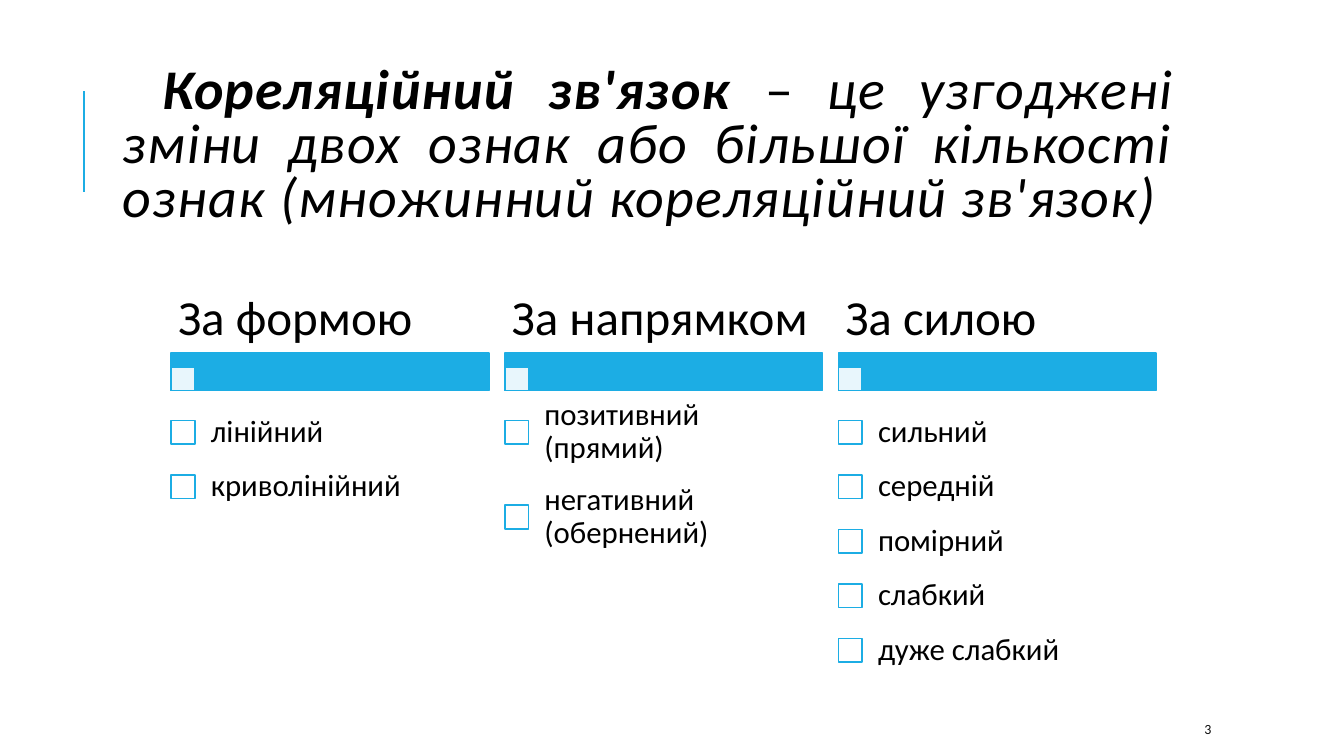
from lxml import etree
from pptx import Presentation
from pptx.enum import shapes, text
from pptx.dml.color import RGBColor
from pptx.oxml import ns
from pptx.util import Pt

COLORS = {"accent": "1CADE4", "paper": "FFFFFF", "ink": "000000", "number": "0D0D0D"}
COLUMNS = [
    ("За формою", 38.9, ["лінійний", "криволінійний"]),
    ("За напрямком", 60.5, ["позитивний (прямий)", "негативний (обернений)"]),
    ("За силою", 38.9, ["сильний", "середній", "помірний", "слабкий", "дуже слабкий"]),
]
COLUMN_LEFT, COLUMN_STEP, COLUMN_WIDTH = 122.4, 238.3, 226.8
BAR_TOP, BAR_HEIGHT, BOX = 252, 26.9, 16.8
ITEM_TOP, ITEM_HEIGHT = 289.4, 38.9


class CorrelationSlide:
    """Hold the style and the current slide, and draw its elements."""

    def __init__(self, deck, font="Calibri"):
        self.slide = deck.slides.add_slide(deck.slide_layouts[5])
        self.font = font

    def color(self, name):
        return RGBColor.from_string(COLORS[name])

    def apply(self, target, formats):
        for key, value in formats.items():
            setattr(target, key, value)

    def frame(self, shape, insets):
        sides = ("margin_left", "margin_top", "margin_right", "margin_bottom")
        formats = {side: Pt(inset) for side, inset in zip(sides, insets)}
        formats |= {"word_wrap": True, "auto_size": text.MSO_AUTO_SIZE.NONE,
                    "vertical_anchor": text.MSO_ANCHOR.MIDDLE}
        self.apply(shape.text_frame, formats)
        return shape.text_frame.paragraphs[0]

    def run(self, paragraph, words, size, color="ink", **formats):
        run = paragraph.add_run()
        run.text = words
        self.apply(run.font, {"name": self.font, "size": Pt(size), **formats})
        run.font.color.rgb = self.color(color)
        return run

    def title(self, place, pieces):
        heading = self.slide.shapes.title
        self.apply(heading, dict(zip(("left", "top", "width", "height"), map(Pt, place))))
        paragraph = self.frame(heading, (7.2, 3.6, 7.2, 3.6))
        self.apply(paragraph, {"alignment": text.PP_ALIGN.JUSTIFY, "line_spacing": 0.8})
        paragraph._p.get_or_add_pPr().set("indent", str(Pt(28.1)))
        for words, bold, italic in pieces:
            run = self.run(paragraph, words, 40, bold=bold, italic=italic)
            run.font._element.set("spc", "100")

    def label(self, words, place, size, insets, color="ink", spacing=0.9):
        box = self.slide.shapes.add_textbox(*map(Pt, place))
        paragraph = self.frame(box, insets)
        paragraph.line_spacing = spacing
        self.run(paragraph, words, size, color)

    def rect(self, place, fill, alpha=None):
        rect = self.slide.shapes.add_shape(shapes.MSO_SHAPE.RECTANGLE, *map(Pt, place))
        rect.shadow.inherit = False
        rect.fill.solid()
        rect.fill.fore_color.rgb = self.color(fill)
        rect.line.color.rgb = self.color("accent")
        rect.line.width = Pt(1.25)
        if alpha:
            tint = rect._element.spPr.find(ns.qn("a:solidFill"))[0]
            etree.SubElement(tint, ns.qn("a:alpha")).set("val", str(alpha * 1000))

    def rule(self, x, start, end):
        rule = self.slide.shapes.add_connector(
            shapes.MSO_CONNECTOR.STRAIGHT, Pt(x), Pt(start), Pt(x), Pt(end))
        rule.line.color.rgb = self.color("accent")
        rule.line.width = Pt(1.5)
        etree.SubElement(rule._element.spPr, ns.qn("a:effectLst"))

    def column(self, left, heading, step, items):
        self.rect((left, BAR_TOP, COLUMN_WIDTH, BAR_HEIGHT), "accent")
        self.rect((left, BAR_TOP + BAR_HEIGHT - BOX, BOX, BOX), "paper", alpha=90)
        self.label(heading, (left, 204.2, COLUMN_WIDTH, 48), 35, (4.8, 3.2, 4.8, 3.2))
        for row, item in enumerate(items):
            top = ITEM_TOP + row * step
            self.rect((left, top + (ITEM_HEIGHT - BOX) / 2, BOX, BOX), "paper")
            self.label(item, (left + 15.9, top, COLUMN_WIDTH - 15.9, ITEM_HEIGHT),
                       22, (12.3,) * 4)


def main():
    deck = Presentation()
    deck.slide_width, deck.slide_height = Pt(960), Pt(540)
    page = CorrelationSlide(deck)
    page.rule(60, 136.8, 64.8)
    page.title((80.6, 46.1, 765.4, 118.1), [
        ("Кореляційний зв'язок", True, True),
        (" – ", False, False),
        ("це узгоджені зміни двох ознак або більшої кількості ознак "
         "(множинний кореляційний зв'язок)", False, True),
    ])
    for index, column in enumerate(COLUMNS):
        page.column(COLUMN_LEFT + index * COLUMN_STEP, *column)
    page.label("3", (853.2, 509.8, 76.3, 21.6), 10, (7.2, 3.6, 7.2, 3.6), "number", 1.0)
    deck.save("out.pptx")


if __name__ == "__main__":
    main()
